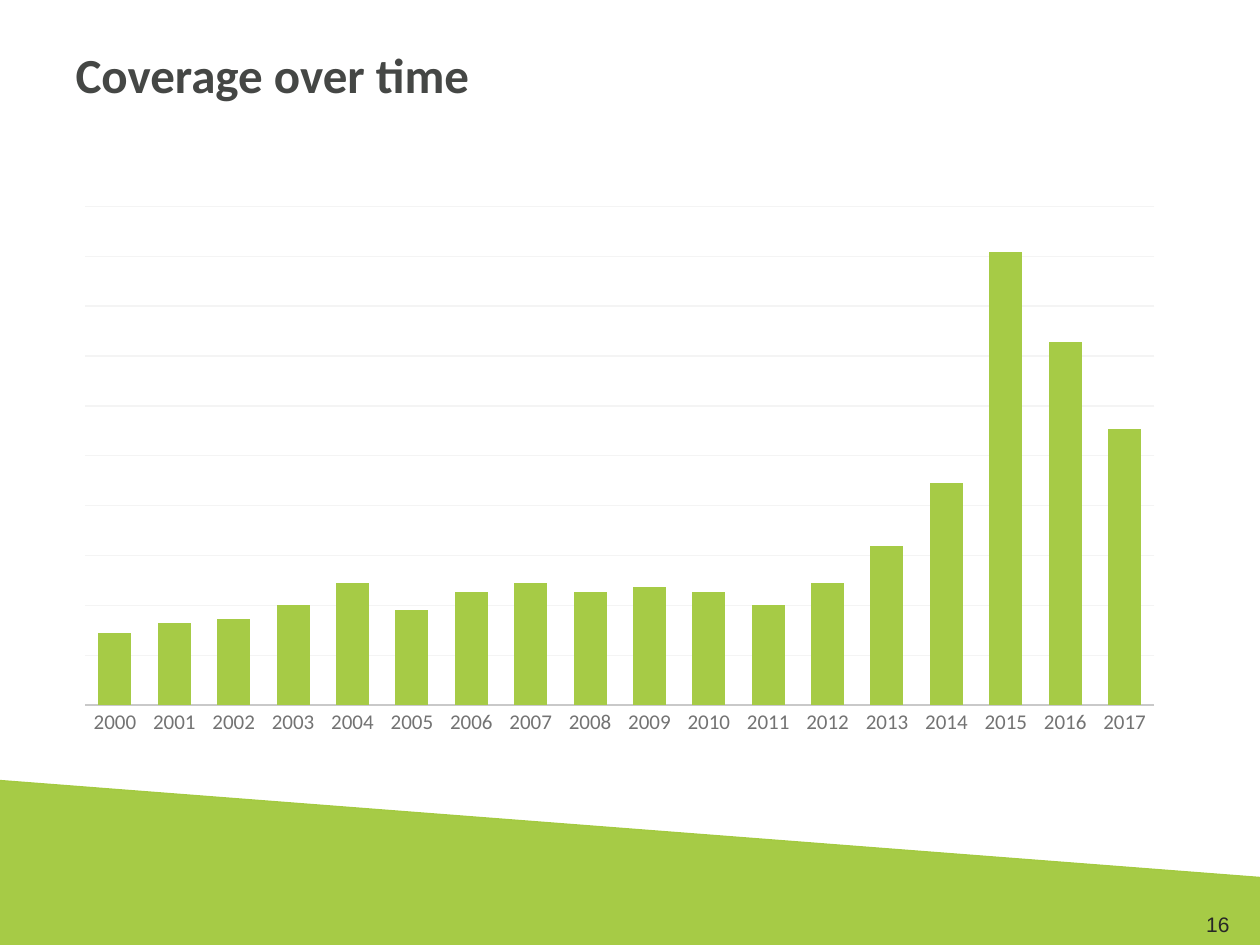
"""Build the slide showing coverage per year as a column chart."""
from dataclasses import dataclass

from lxml.etree import SubElement
from pptx import Presentation
from pptx.chart.data import CategoryChartData
from pptx.dml.color import RGBColor
from pptx.enum.chart import XL_CHART_TYPE as ChartType, XL_TICK_LABEL_POSITION as LabelPosition, XL_TICK_MARK as TickMark
from pptx.enum.shapes import MSO_SHAPE as ShapeType
from pptx.enum.text import MSO_ANCHOR as Anchor, PP_ALIGN as Align
from pptx.oxml.ns import qn
from pptx.util import Cm, Pt


@dataclass(frozen=True)
class Theme:
    green: RGBColor = RGBColor.from_string("A6CB46")
    green_edge: RGBColor = RGBColor.from_string("A4CA41")
    heading: RGBColor = RGBColor.from_string("454745")
    text: RGBColor = RGBColor.from_string("272727")
    axis_text: RGBColor = RGBColor.from_string("737373")
    axis_line: RGBColor = RGBColor.from_string("C9C9C9")
    grid: RGBColor = RGBColor.from_string("F4F4F4")
    font: str = "Calibri"
    number_font: str = "Arial"
    title_size: int = 28
    label_size: int = 12
    chart_size: int = 10


@dataclass(frozen=True)
class Box:
    left: float
    top: float
    width: float
    height: float

    def lengths(self) -> tuple:
        return Cm(self.left), Cm(self.top), Cm(self.width), Cm(self.height)


@dataclass(frozen=True)
class Label:
    text: str
    font: str
    size: int
    color: RGBColor
    align: Align
    bold: bool = False


THEME = Theme()
TITLE_BOX = Box(1.27, 0.76, 22.86, 2.21)
CHART_BOX = Box(1.27, 3.94, 22.45, 11.05)
BAND_BOX = Box(-0.69, 16.71, 26.59, 3.38)
NUMBER_BOX = Box(23.7, 18.26, 1.7, 0.79)
TITLE = Label("Coverage over time", THEME.font, THEME.title_size, THEME.heading, Align.LEFT, True)
NUMBER = Label("16", THEME.number_font, THEME.label_size, THEME.text, Align.CENTER)
FIRST_YEAR = 2000
COVERAGE = (16, 18, 19, 22, 27, 21, 25, 27, 25, 26, 25, 22, 27, 35, 49, 100, 80, 61)
PLOT_LAYOUT = {"x": 0.02, "y": 0.02, "w": 0.96, "h": 0.91}


def style_font(font, name: str, size: int, color: RGBColor, bold: bool = False) -> None:
    """Apply a typeface, size, colour and weight."""
    font.name, font.size, font.bold = name, Pt(size), bold
    font.color.rgb = color


def write_label(shape, label: Label) -> None:
    """Write one formatted line into a shape."""
    frame = shape.text_frame
    frame.word_wrap = True
    frame.vertical_anchor = Anchor.TOP
    frame.text = label.text
    paragraph = frame.paragraphs[0]
    paragraph.alignment = label.align
    style_font(paragraph.runs[0].font, label.font, label.size, label.color, label.bold)


def add_band(slide) -> None:
    """Add the slanted band along the bottom."""
    band = slide.shapes.add_shape(ShapeType.RECTANGLE, *BAND_BOX.lengths())
    band.rotation = 4.4
    band.shadow.inherit = False
    band.fill.solid()
    band.fill.fore_color.rgb = THEME.green
    band.line.color.rgb = THEME.green_edge
    band.line.width = Pt(0.75)


def fix_plot_layout(chart) -> None:
    """Place the inner plot area at fixed fractions of the chart."""
    plot_area = chart.element.find(f".//{qn('c:plotArea')}")
    layout = plot_area.find(qn("c:layout"))
    if layout is None:
        layout = SubElement(plot_area, qn("c:layout"))
        plot_area.insert(0, layout)
    manual = SubElement(layout, qn("c:manualLayout"))
    settings = {"layoutTarget": "inner", "xMode": "edge", "yMode": "edge", **PLOT_LAYOUT}
    for name, value in settings.items():
        SubElement(manual, qn(f"c:{name}")).set("val", str(value))


def style_axes(chart) -> None:
    """Format the year axis and the unlabelled value grid."""
    years = chart.category_axis
    years.major_tick_mark = years.minor_tick_mark = TickMark.NONE
    style_font(years.tick_labels.font, THEME.font, THEME.label_size, THEME.axis_text)
    years.format.line.color.rgb = THEME.axis_line
    years.format.line.width = Pt(1.25)
    values = chart.value_axis
    values.minimum_scale, values.maximum_scale, values.major_unit = 0, 110, 11
    values.major_tick_mark = values.minor_tick_mark = TickMark.NONE
    values.tick_label_position = LabelPosition.NONE
    values.format.line.fill.background()
    values.has_major_gridlines = True
    grid_line = values.major_gridlines.format.line
    grid_line.color.rgb = THEME.grid
    grid_line.width = Pt(0.75)


def add_coverage_chart(slide) -> None:
    """Add the column chart of coverage per year."""
    data = CategoryChartData()
    data.categories = [str(FIRST_YEAR + index) for index in range(len(COVERAGE))]
    data.add_series("Series 1", COVERAGE)
    chart = slide.shapes.add_chart(ChartType.COLUMN_CLUSTERED, *CHART_BOX.lengths(), data).chart
    chart.has_title = chart.has_legend = False
    style_font(chart.font, THEME.font, THEME.chart_size, THEME.text)
    plot = chart.plots[0]
    plot.gap_width, plot.overlap, plot.vary_by_categories = 80, 25, False
    columns = plot.series[0].format.fill
    columns.solid()
    columns.fore_color.rgb = THEME.green
    style_axes(chart)
    fix_plot_layout(chart)


def main() -> None:
    """Assemble and save the slide."""
    presentation = Presentation()
    presentation.slide_width, presentation.slide_height = Cm(25.4), Cm(19.05)
    slide = presentation.slides.add_slide(presentation.slide_layouts[5])
    add_band(slide)
    title = slide.shapes.title
    title.left, title.top, title.width, title.height = TITLE_BOX.lengths()
    write_label(title, TITLE)
    add_coverage_chart(slide)
    write_label(slide.shapes.add_textbox(*NUMBER_BOX.lengths()), NUMBER)
    presentation.save("out.pptx")


if __name__ == "__main__":
    main()
